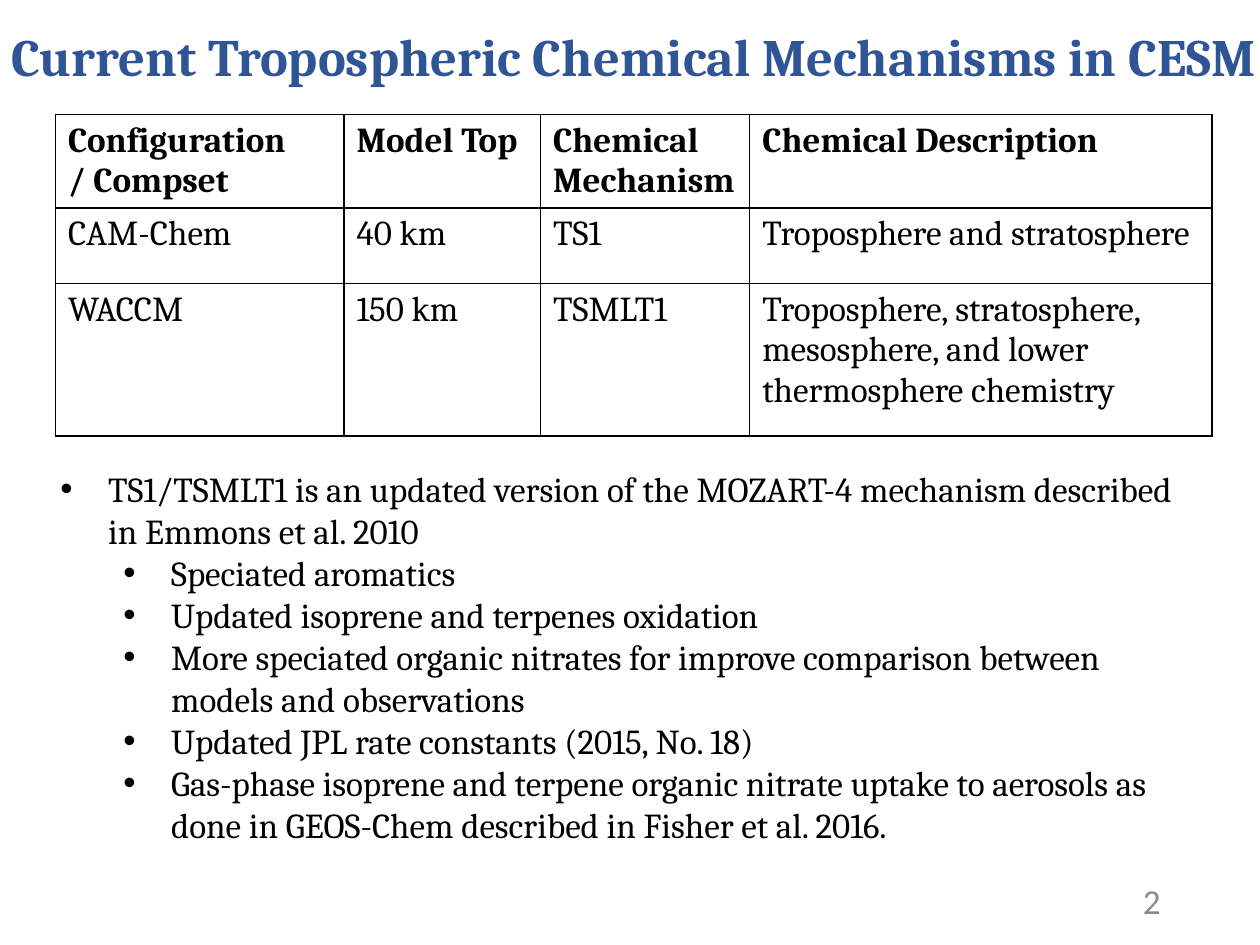
from lxml import etree
from pptx import Presentation
from pptx import util as u
from pptx.dml.color import RGBColor
from pptx.enum import text
from pptx.oxml import ns

COLORS = {"title": "2F5597", "body": "000000", "number": "8C8C8C"}
WIDTH, HEIGHT = 10, 7.5

COLUMNS = [2.29, 1.56, 1.66, 3.67]
ROWS = [0.74, 0.6, 1.21]
MECHANISMS = [
    ["Configuration\n/ Compset", "Model Top", "Chemical Mechanism", "Chemical Description"],
    ["CAM-Chem", "40 km", "TS1", "Troposphere and stratosphere"],
    ["WACCM", "150 km", "TSMLT1",
     "Troposphere, stratosphere, mesosphere, and lower thermosphere chemistry"],
]
UPDATES = [
    (0, "TS1/TSMLT1 is an updated version of the MOZART-4 mechanism described in Emmons et al. 2010"),
    (1, "Speciated aromatics"),
    (1, "Updated isoprene and terpenes oxidation"),
    (1, "More speciated organic nitrates for improve comparison between models and observations"),
    (1, "Updated JPL rate constants (2015, No. 18)"),
    (1, "Gas-phase isoprene and terpene organic nitrate uptake to aerosols as done in "
        "GEOS-Chem described in Fisher et al. 2016."),
]


def inches(box):
    return [u.Inches(length) for length in box]


def style(frame, color, size=20, name="Cambria", bold=False):
    for para in frame.paragraphs:
        for span in para.runs:
            span.font.size = u.Pt(size)
            span.font.name = name
            span.font.bold = bold
            span.font.color.rgb = RGBColor.from_string(COLORS[color])


def add_title(page, box):
    title = page.shapes.title
    title.left, title.top, title.width, title.height = inches(box)
    frame = title.text_frame
    frame.text = "Current Tropospheric Chemical Mechanisms in CESM"
    frame.auto_size = text.MSO_AUTO_SIZE.NONE
    frame.vertical_anchor = text.MSO_ANCHOR.MIDDLE
    frame.paragraphs[0].alignment = text.PP_ALIGN.CENTER
    frame.paragraphs[0].line_spacing = 0.9
    style(frame, "title", size=30, bold=True)


def add_borders(cell):
    # Border elements come before the fill in the cell properties
    properties = cell._tc.get_or_add_tcPr()
    for place, side in enumerate(("lnL", "lnR", "lnT", "lnB")):
        line = etree.Element(ns.qn(f"a:{side}"), w=str(u.Pt(1)))
        fill = etree.SubElement(line, ns.qn("a:solidFill"))
        etree.SubElement(fill, ns.qn("a:srgbClr"), val=COLORS["body"])
        properties.insert(place, line)


def add_mechanism_table(page, box):
    table = page.shapes.add_table(len(ROWS), len(COLUMNS), *inches(box)).table
    table.horz_banding = False
    for column, share in zip(table.columns, COLUMNS):
        column.width = u.Inches(box[2] * share / sum(COLUMNS))
    for row, share in zip(table.rows, ROWS):
        row.height = u.Inches(box[3] * share / sum(ROWS))
    for row, values in enumerate(MECHANISMS):
        for column, value in enumerate(values):
            cell = table.cell(row, column)
            cell.text_frame.text = value
            cell.fill.background()
            add_borders(cell)
            style(cell.text_frame, "body", bold=row == 0)


def add_updates(page, box):
    frame = page.shapes.add_textbox(*inches(box)).text_frame
    frame.word_wrap = True
    frame.text = "\n".join(wording for _, wording in UPDATES)
    for para, (level, _) in zip(frame.paragraphs, UPDATES):
        para.level = level
        properties = para._p.get_or_add_pPr()
        properties.set("marL", str(u.Inches(0.38 + 0.5 * level)))
        properties.set("indent", str(u.Inches(-0.38)))
        etree.SubElement(properties, ns.qn("a:buFont"), typeface="Arial")
        etree.SubElement(properties, ns.qn("a:buChar"), char="•")
    style(frame, "body")


def add_page_number(page, box):
    frame = page.shapes.add_textbox(*inches(box)).text_frame
    frame.word_wrap = True
    frame.text = "2"
    frame.vertical_anchor = text.MSO_ANCHOR.MIDDLE
    frame.paragraphs[0].alignment = text.PP_ALIGN.RIGHT
    style(frame, "number", name="Calibri")


def main():
    deck = Presentation()
    deck.slide_width, deck.slide_height = inches((WIDTH, HEIGHT))
    page = deck.slides.add_slide(deck.slide_layouts.get_by_name("Title Only"))

    # Regions from top to bottom
    add_title(page, (-0.04, 0.1, 10.14, 0.74))
    add_mechanism_table(page, (0.44, 0.91, sum(COLUMNS), sum(ROWS)))
    add_updates(page, (0.38, 3.66, 9.29, 3.13))
    add_page_number(page, (7.06, 6.95, 2.25, 0.4))

    deck.save("out.pptx")


if __name__ == "__main__":
    main()
